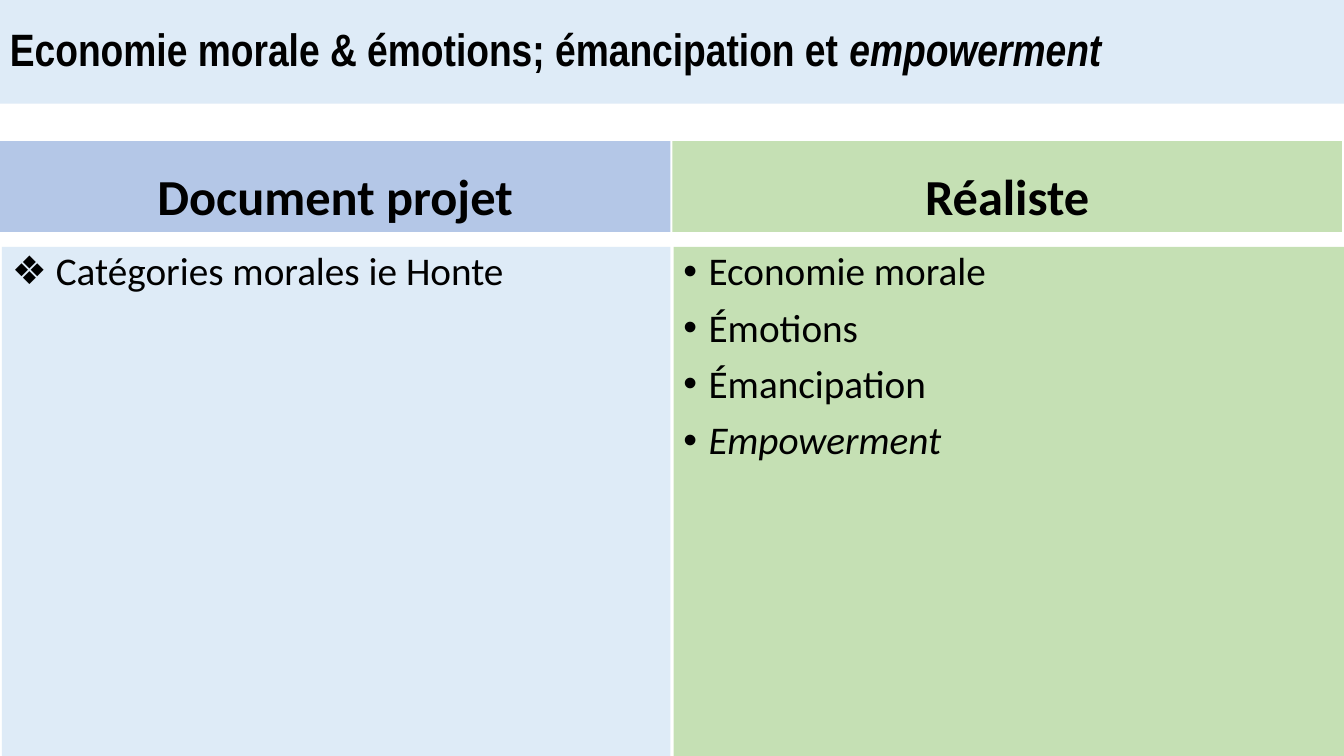
from dataclasses import dataclass

import pptx
import pptx.dml.color
import pptx.enum.shapes
import pptx.enum.text
import pptx.oxml
import pptx.oxml.ns
import pptx.util
from pptx.util import Inches

COLORS = {"pale": "DEEBF7", "blue": "B4C7E7", "green": "C5E0B4", "ink": "000000"}
ALIGN = pptx.enum.text.PP_ALIGN
ANCHOR = pptx.enum.text.MSO_ANCHOR


@dataclass
class Panel:
    left: float
    top: float
    width: float
    height: float
    fill: str
    anchor: ANCHOR


@dataclass
class Column:
    head: Panel
    title: str
    body: Panel
    bullet: str
    items: list[str]


HEAD_TOP, HEAD_HIGH = 1.4, 0.9
BODY_TOP, BODY_HIGH = 2.45, 5.05
BANNER = Panel(0, 0, 13.33, 1.03, "pale", ANCHOR.MIDDLE)
COLUMNS = [
    Column(
        Panel(0, HEAD_TOP, 6.65, HEAD_HIGH, "blue", ANCHOR.BOTTOM),
        "Document projet",
        Panel(0.02, BODY_TOP, 6.63, BODY_HIGH, "pale", ANCHOR.TOP),
        "❖",
        [" Catégories morales ie Honte"],
    ),
    Column(
        Panel(6.67, HEAD_TOP, 6.64, HEAD_HIGH, "green", ANCHOR.BOTTOM),
        "Réaliste",
        Panel(6.68, BODY_TOP, 6.65, BODY_HIGH, "green", ANCHOR.TOP),
        "•",
        ["Economie morale", "Émotions", "Émancipation", "Empowerment"],
    ),
]


def rgb(name: str) -> pptx.dml.color.RGBColor:
    return pptx.dml.color.RGBColor.from_string(COLORS[name])


def draw(slide, panel: Panel):
    """Add a filled panel and return its empty text frame."""
    shape = slide.shapes.add_shape(
        pptx.enum.shapes.MSO_SHAPE.RECTANGLE,
        Inches(panel.left), Inches(panel.top),
        Inches(panel.width), Inches(panel.height),
    )
    shape.shadow.inherit = False
    shape.fill.solid()
    shape.fill.fore_color.rgb = rgb(panel.fill)
    shape.line.fill.background()
    frame = shape.text_frame
    frame.word_wrap = True
    frame.vertical_anchor = panel.anchor
    return frame


def write(para, text: str, *, size: float, font: str = "Calibri",
          bold: bool = False, italic: bool = False,
          align: ALIGN = ALIGN.LEFT, before: float = 10) -> None:
    para.alignment = align
    para.line_spacing = 0.9
    para.space_before = pptx.util.Pt(before)
    run = para.add_run()
    run.text = text
    run.font.name = font
    run.font.size = pptx.util.Pt(size)
    run.font.bold = bold
    run.font.italic = italic
    run.font.color.rgb = rgb("ink")


def mark(para, bullet: str) -> None:
    """Give the paragraph a bullet and a hanging indent."""
    props = para._p.get_or_add_pPr()
    props.set("marL", str(Inches(0.25)))
    props.set("indent", str(-Inches(0.25)))
    space = pptx.oxml.ns.nsdecls("a")
    for xml in (f'<a:buFont {space} typeface="Arial"/>',
                f'<a:buChar {space} char="{bullet}"/>'):
        props.append(pptx.oxml.parse_xml(xml))


def fill(slide, column: Column) -> None:
    """Draw a column's heading and its bulleted list."""
    head = draw(slide, column.head)
    write(head.paragraphs[0], column.title, size=36, bold=True, align=ALIGN.CENTER)
    body = draw(slide, column.body)
    for i, item in enumerate(column.items):
        para = body.add_paragraph() if i else body.paragraphs[0]
        write(para, item, size=28, italic=item == "Empowerment")
        mark(para, column.bullet)


def main() -> None:
    deck = pptx.Presentation()
    deck.slide_width, deck.slide_height = Inches(13.33), Inches(7.5)
    slide = deck.slides.add_slide(deck.slide_layouts[6])

    title = draw(slide, BANNER).paragraphs[0]
    style = dict(size=32.4, font="Arial Narrow", bold=True, before=0)
    write(title, "Economie morale & émotions; émancipation et ", **style)
    write(title, "empowerment", italic=True, **style)

    for column in COLUMNS:
        fill(slide, column)
    deck.save("out.pptx")


if __name__ == "__main__":
    main()
